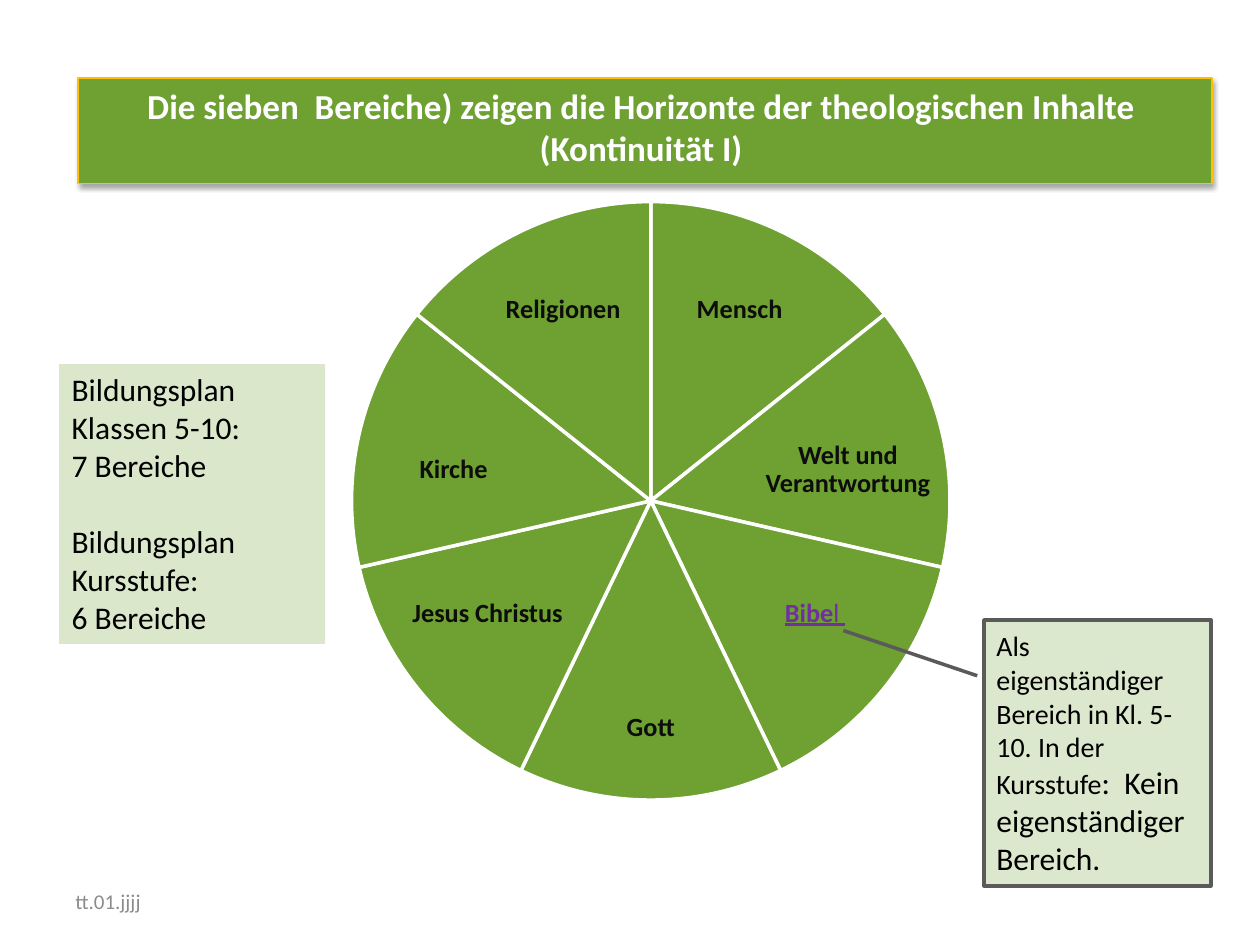
from lxml import etree
from pptx import Presentation
from pptx import util as u
from pptx.dml.color import RGBColor
from pptx.enum import shapes, text
from pptx.oxml.ns import qn

# Content
TITLE = "Die sieben  Bereiche) zeigen die Horizonte der theologischen Inhalte  (Kontinuität I) "
# Clockwise from the top: label runs, then left, top, width, height of the label
AREAS = [
    (["Mensch"], (5.22, 2.05, 1.3, 0.82)),
    (["Welt und Verantwortung"], (6.04, 3.29, 1.38, 0.88)),
    (["Bibe", "l "], (5.85, 4.42, 1.24, 0.9)),
    (["Gott"], (4.53, 5.33, 1.27, 0.9)),
    (["Jesus Christus"], (3.25, 4.42, 1.24, 0.9)),
    (["Kirche"], (2.91, 3.29, 1.38, 0.88)),
    (["Religionen"], (3.82, 2.05, 1.3, 0.82)),
]
HIGHLIGHTED = 2
PLANS = ["Bildungsplan Klassen 5-10:", "7 Bereiche",
         "Bildungsplan  Kursstufe:", "6 Bereiche"]
CALLOUT = [("Als eigenständiger Bereich in Kl. 5-10. In der Kursstufe", "note"),
           (":  Kein eigenständiger Bereich.", "body")]
DATE = "tt.01.jjjj"

THEME = {
    "font": "Calibri",
    "colour": {"green": "6EA032", "white": "FFFFFF", "gold": "FFC000", "label": "0D0D0D",
               "purple": "7030A0", "grey": "8C8C8C", "border": "5A5A5A", "black": "000000"},
    "size": {"title": 20, "body": 18, "note": 16, "label": 15, "date": 12},
}
WHEEL = (2.79, 1.6, 4.75, 4.75)


def colour(name):
    return RGBColor.from_string(THEME["colour"][name])


def style(span, size, ink, bold=False):
    span.font.name = THEME["font"]
    span.font.size = u.Pt(THEME["size"][size])
    span.font.color.rgb = colour(ink)
    span.font.bold = bold


def paint(shape, line=None, width=1.0, opacity=None):
    shape.fill.solid()
    shape.fill.fore_color.rgb = colour("green")
    if opacity:
        solid = shape._element.spPr.find(qn("a:solidFill"))
        etree.SubElement(solid[0], qn("a:alpha"), val=str(opacity * 1000))
    if line:
        shape.line.color.rgb = colour(line)
        shape.line.width = u.Pt(width)
    else:
        shape.line.fill.background()


def add_shape(page, kind, place):
    shape = page.shapes.add_shape(kind, *map(u.Inches, place))
    shape.shadow.inherit = False
    return shape


def add_text_box(page, place):
    box = page.shapes.add_textbox(*map(u.Inches, place))
    box.text_frame.word_wrap = True
    box.text_frame.vertical_anchor = text.MSO_ANCHOR.MIDDLE
    return box


def add_title(page):
    title = page.shapes.title
    title.left, title.top, title.width, title.height = map(u.Inches, (0.62, 0.62, 9, 0.77))
    paint(title, "gold", 0.75)
    effects = etree.SubElement(title._element.spPr, qn("a:effectLst"))
    shadow = etree.SubElement(effects, qn("a:outerShdw"), blurRad=str(u.Pt(3.1)),
                              dist=str(u.Pt(1.8)), dir="5400000", rotWithShape="0")
    tone = etree.SubElement(shadow, qn("a:srgbClr"), val=THEME["colour"]["black"])
    etree.SubElement(tone, qn("a:alpha"), val="35000")
    frame = title.text_frame
    frame.text = TITLE
    frame.word_wrap = True
    frame.auto_size = text.MSO_AUTO_SIZE.SHAPE_TO_FIT_TEXT
    frame.vertical_anchor = text.MSO_ANCHOR.TOP
    para = frame.paragraphs[0]
    para.alignment = text.PP_ALIGN.CENTER
    style(para.runs[0], "title", "white", True)


def add_wheel(page):
    step = 360 / len(AREAS)
    for index, (words, place) in enumerate(AREAS):
        # Angles are held in 60000ths of a degree, adjustments in 100000ths
        sector = add_shape(page, shapes.MSO_SHAPE.PIE, WHEEL)
        for end in (0, 1):
            sector.adjustments[end] = (270 + (index + end) * step) % 360 * 0.6
        paint(sector, "white", 2)

        frame = add_text_box(page, place).text_frame
        frame.margin_left = frame.margin_right = u.Inches(0.02)
        frame.margin_top = frame.margin_bottom = u.Inches(0.02)
        para = frame.paragraphs[0]
        para.alignment = text.PP_ALIGN.CENTER
        para.line_spacing = 0.9
        for position, word in enumerate(words):
            span = para.add_run()
            span.text = word
            marked = index == HIGHLIGHTED
            style(span, "label", "purple" if marked else "label", position == 0)
            span.font.underline = marked


def add_callout(page):
    callout = add_shape(page, shapes.MSO_SHAPE.LINE_CALLOUT_1, (7.81, 4.92, 1.8, 2.11))
    for index, value in enumerate((0.21, -0.03, 0.04, -0.62)):
        callout.adjustments[index] = value
    paint(callout, "border", 2, 24)
    callout.text_frame.vertical_anchor = text.MSO_ANCHOR.MIDDLE
    para = callout.text_frame.paragraphs[0]
    para.alignment = text.PP_ALIGN.LEFT
    for words, size in CALLOUT:
        span = para.add_run()
        span.text = words
        style(span, size, "black")


def add_plans(page):
    panel = add_shape(page, shapes.MSO_SHAPE.RECTANGLE, (0.47, 2.89, 2.11, 2.22))
    paint(panel, opacity=25)
    frame = panel.text_frame
    frame.text = "\n".join(PLANS)
    frame.vertical_anchor = text.MSO_ANCHOR.TOP
    for para in frame.paragraphs:
        para.alignment = text.PP_ALIGN.LEFT
        style(para.runs[0], "body", "black")
    frame.paragraphs[2].space_before = u.Pt(22)


def add_date(page):
    para = add_text_box(page, (0.5, 6.95, 2.33, 0.4)).text_frame.paragraphs[0]
    para.text = DATE
    style(para.runs[0], "date", "grey")


def main():
    deck = Presentation()
    deck.slide_width, deck.slide_height = u.Inches(10), u.Inches(7.5)
    page = deck.slides.add_slide(deck.slide_layouts[5])
    add_wheel(page)
    add_title(page)
    add_date(page)
    add_callout(page)
    add_plans(page)
    deck.save("out.pptx")


if __name__ == "__main__":
    main()
